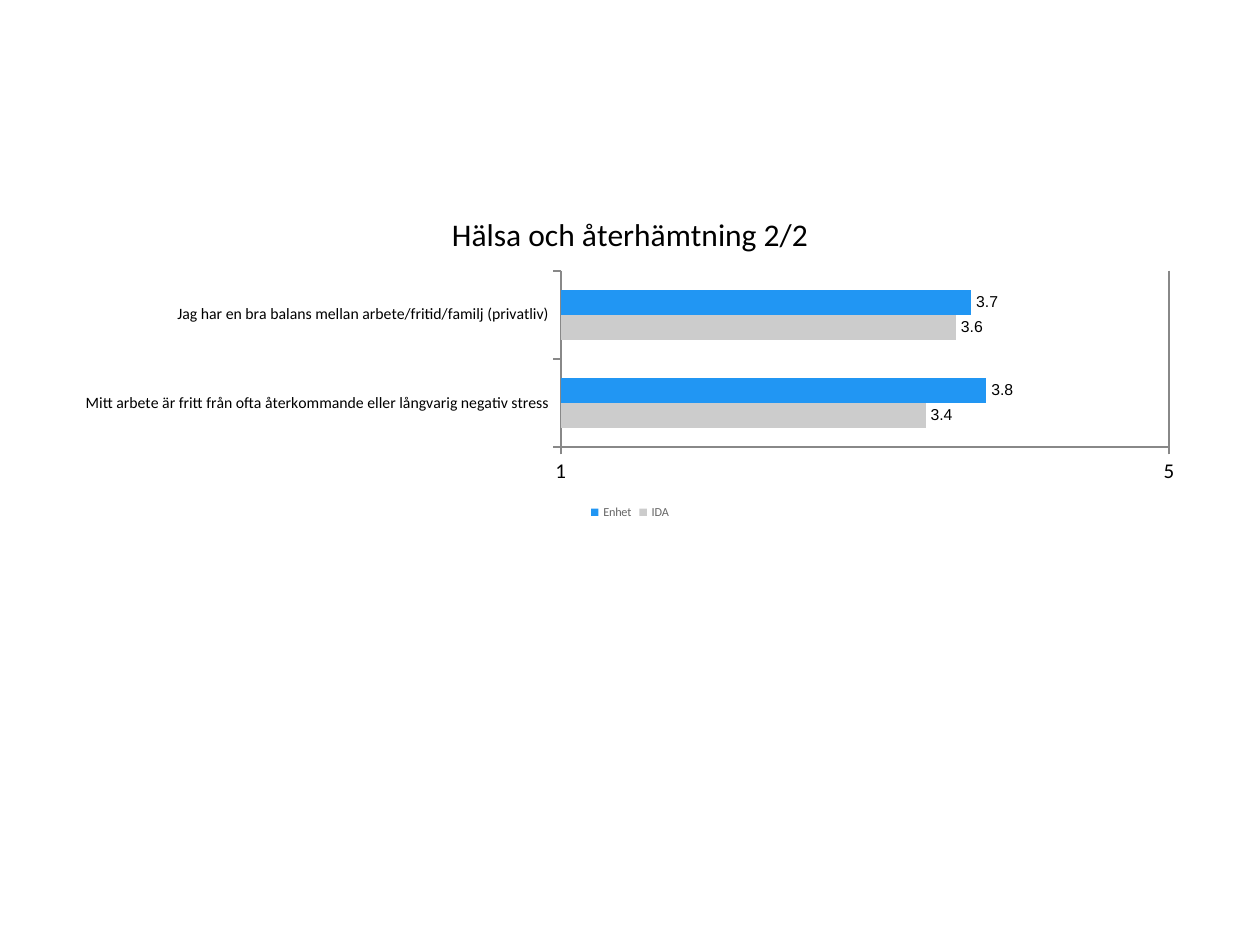
"""Build a slide with a clustered bar chart on health and recovery."""
from dataclasses import dataclass

import pptx
import pptx.chart.data
import pptx.dml.color
import pptx.enum.chart
import pptx.util

COLORS = {"text": "000000", "muted": "666666", "axis": "888888", "average": "CCCCCC", "unit": "2196F3"}
WIDTH, HEIGHT = pptx.util.Inches(10), pptx.util.Inches(7.5)


@dataclass(frozen=True)
class Series:
    name: str
    values: tuple[float, ...]
    color: str


@dataclass(frozen=True)
class Area:
    left: float
    top: float
    width: float
    height: float


TITLE = "Hälsa och återhämtning 2/2"
CATEGORIES = (
    "Mitt arbete är fritt från ofta återkommande eller långvarig negativ stress",
    "Jag har en bra balans mellan arbete/fritid/familj (privatliv)",
)
SERIES = (Series("IDA", (3.4, 3.6), "average"), Series("Enhet", (3.8, 3.7), "unit"))
CHART_AREA = Area(0.05, 0.205, 0.9, 0.35)


def rgb(color: str) -> pptx.dml.color.RGBColor:
    return pptx.dml.color.RGBColor.from_string(COLORS[color])


def set_font(font, size: float, color: str = "text", name: str = "Calibri") -> None:
    font.size = pptx.util.Pt(size)
    font.name = name
    font.bold = False
    font.color.rgb = rgb(color)


def set_line(line) -> None:
    line.color.rgb = rgb("axis")
    line.width = pptx.util.Pt(1)


def format_axis(axis, size: float) -> None:
    axis.major_tick_mark = pptx.enum.chart.XL_TICK_MARK.OUTSIDE
    axis.minor_tick_mark = pptx.enum.chart.XL_TICK_MARK.NONE
    set_font(axis.tick_labels.font, size)
    set_line(axis.format.line)


def format_series(ser, series: Series) -> None:
    ser.format.fill.solid()
    ser.format.fill.fore_color.rgb = rgb(series.color)
    ser.invert_if_negative = False
    labels = ser.data_labels
    labels.show_value = True
    labels.number_format = "##.0"
    labels.number_format_is_linked = False
    set_font(labels.font, 9, name="Arial")


def add_bar_chart(s, area: Area) -> None:
    data = pptx.chart.data.CategoryChartData()
    data.categories = CATEGORIES
    for series in SERIES:
        data.add_series(series.name, series.values)
    chart = s.shapes.add_chart(
        pptx.enum.chart.XL_CHART_TYPE.BAR_CLUSTERED,
        int(area.left * WIDTH), int(area.top * HEIGHT),
        int(area.width * WIDTH), int(area.height * HEIGHT), data,
    ).chart
    set_font(chart.font, 10)

    tf = chart.chart_title.text_frame
    tf.text = TITLE
    set_font(tf.paragraphs[0].runs[0].font, 18)
    chart.chart_title.include_in_layout = False

    chart.has_legend = True
    chart.legend.position = pptx.enum.chart.XL_LEGEND_POSITION.BOTTOM
    chart.legend.include_in_layout = False
    set_font(chart.legend.font, 7, "muted")

    format_axis(chart.category_axis, 9)
    axis = chart.value_axis
    format_axis(axis, 12)
    axis.minimum_scale, axis.maximum_scale, axis.major_unit = 1, 5, 4
    axis.has_major_gridlines = True
    set_line(axis.major_gridlines.format.line)
    axis.tick_labels.number_format = "General"
    axis.tick_labels.number_format_is_linked = False

    plot = chart.plots[0]
    plot.gap_width = 150
    plot.vary_by_categories = False
    for ser, series in zip(plot.series, SERIES):
        format_series(ser, series)


def main() -> None:
    prs = pptx.Presentation()
    prs.slide_width, prs.slide_height = WIDTH, HEIGHT
    s = prs.slides.add_slide(prs.slide_layouts[6])
    add_bar_chart(s, CHART_AREA)
    prs.save("out.pptx")


if __name__ == "__main__":
    main()
